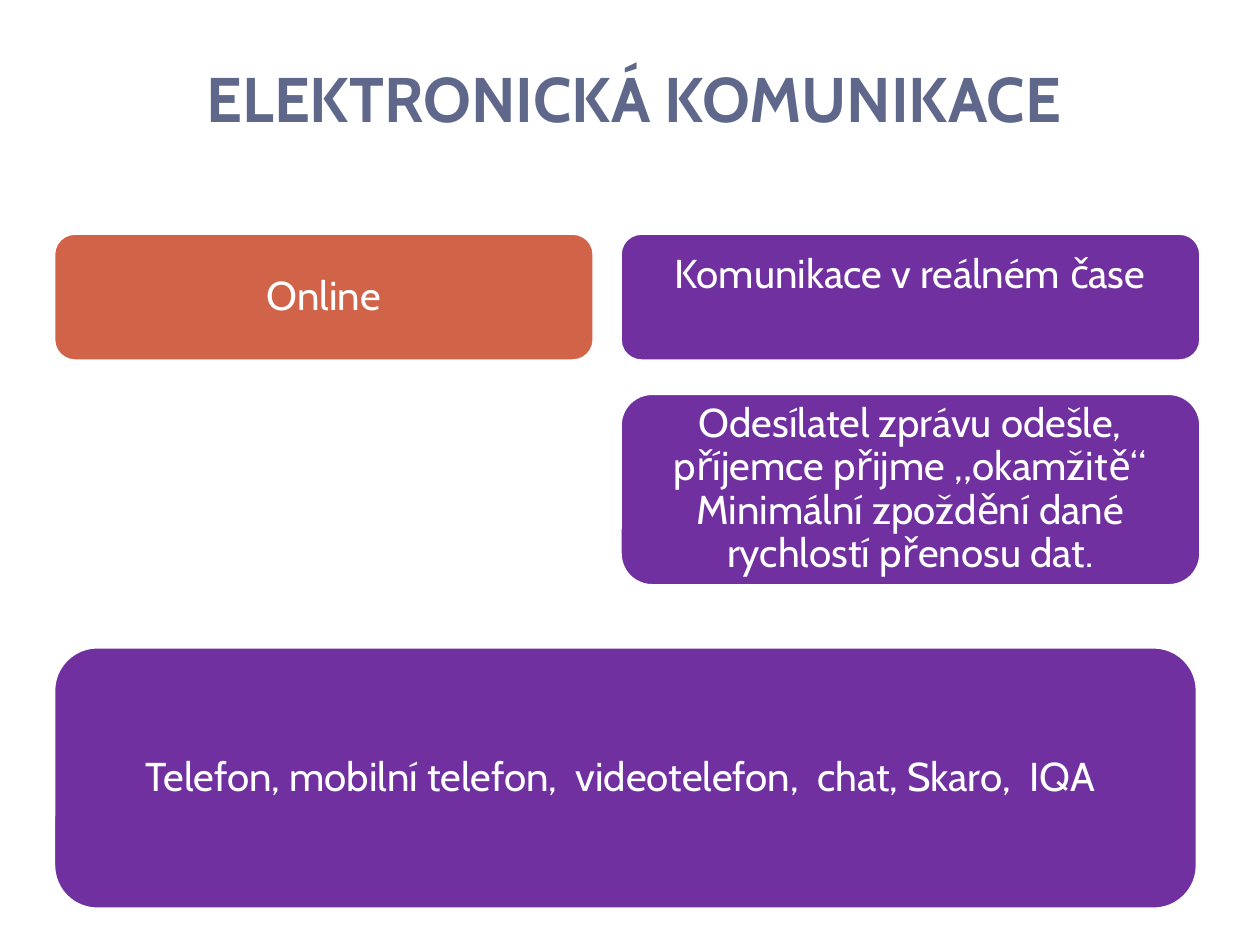
from pptx import Presentation
from pptx.dml.color import RGBColor
from pptx.enum.shapes import MSO_SHAPE
from pptx.enum.text import MSO_ANCHOR, MSO_AUTO_SIZE, PP_ALIGN
from pptx.util import Cm, Pt

ROUNDED = MSO_SHAPE.ROUNDED_RECTANGLE
CENTER = PP_ALIGN.CENTER
MIDDLE, BOTTOM = MSO_ANCHOR.MIDDLE, MSO_ANCHOR.BOTTOM
NO_FIT = MSO_AUTO_SIZE.NONE

FONT = "Cabin"
WHITE, SLATE, ORANGE, PURPLE = "FFFFFF", "5F688B", "D16349", "7030A0"
LEFT, RIGHT_COLUMN = 1.08, 12.5
TOP_ROW, TOP_HEIGHT = 4.7, 2.58
TEXT_LINE = 0.89


def color(hex_value):
    """Turn a hex string into a colour."""
    return RGBColor.from_string(hex_value)


def format_paragraph(paragraph, size, hex_value, spacing, bold=False):
    """Centre a paragraph and set its font and line spacing."""
    paragraph.alignment = CENTER
    paragraph.line_spacing = spacing
    paragraph.font.name = FONT
    paragraph.font.size = Pt(size)
    paragraph.font.bold = bold
    paragraph.font.color.rgb = color(hex_value)


def add_heading(slide, text):
    """Place and format the title placeholder."""
    heading = slide.shapes.title
    heading.left, heading.top = Cm(LEFT), Cm(1.12)
    heading.width, heading.height = Cm(23.4), Cm(1.73)
    frame = heading.text_frame
    frame.text = text
    frame.auto_size = NO_FIT
    frame.vertical_anchor = BOTTOM
    format_paragraph(frame.paragraphs[0], 36, SLATE, Pt(20), bold=True)


def add_card(slide, text, left, top, width, height, fill, space_below=0):
    """Add a rounded card whose side margins allow for its corner radius."""
    card = slide.shapes.add_shape(ROUNDED, Cm(left), Cm(top), Cm(width), Cm(height))
    card.shadow.inherit = False
    card.fill.solid()
    card.fill.fore_color.rgb = color(fill)
    card.line.color.rgb = color(WHITE)
    card.line.width = Pt(2)
    frame = card.text_frame
    frame.text = text
    frame.word_wrap = True
    frame.vertical_anchor = MIDDLE
    corner_inset = 0.29 * height / 6
    frame.margin_left = frame.margin_right = Cm(max(0, 0.36 - corner_inset))
    frame.margin_top, frame.margin_bottom = 0, Cm(space_below)
    format_paragraph(frame.paragraphs[0], 23, WHITE, 0.9)


def main():
    """Build the slide and save it."""
    presentation = Presentation()
    presentation.slide_width, presentation.slide_height = Cm(25.4), Cm(19.05)
    slide = presentation.slides.add_slide(presentation.slide_layouts[5])
    add_heading(slide, "ELEKTRONICKÁ KOMUNIKACE")
    add_card(slide, "Komunikace v reálném čase", RIGHT_COLUMN, TOP_ROW,
             11.71, TOP_HEIGHT, PURPLE, TEXT_LINE)
    add_card(slide, "Odesílatel zprávu odešle, příjemce přijme „okamžitě“ "
             "Minimální zpoždění dané rychlostí přenosu dat.",
             RIGHT_COLUMN, 7.93, 11.71, 3.88, PURPLE)
    add_card(slide, "Online", LEFT, TOP_ROW, 10.9, TOP_HEIGHT, ORANGE)
    add_card(slide, "Telefon, mobilní telefon,  videotelefon,  chat, Skaro,  IQA ",
             LEFT, 13.04, 23.06, 5.29, PURPLE)
    presentation.save("out.pptx")


if __name__ == "__main__":
    main()
